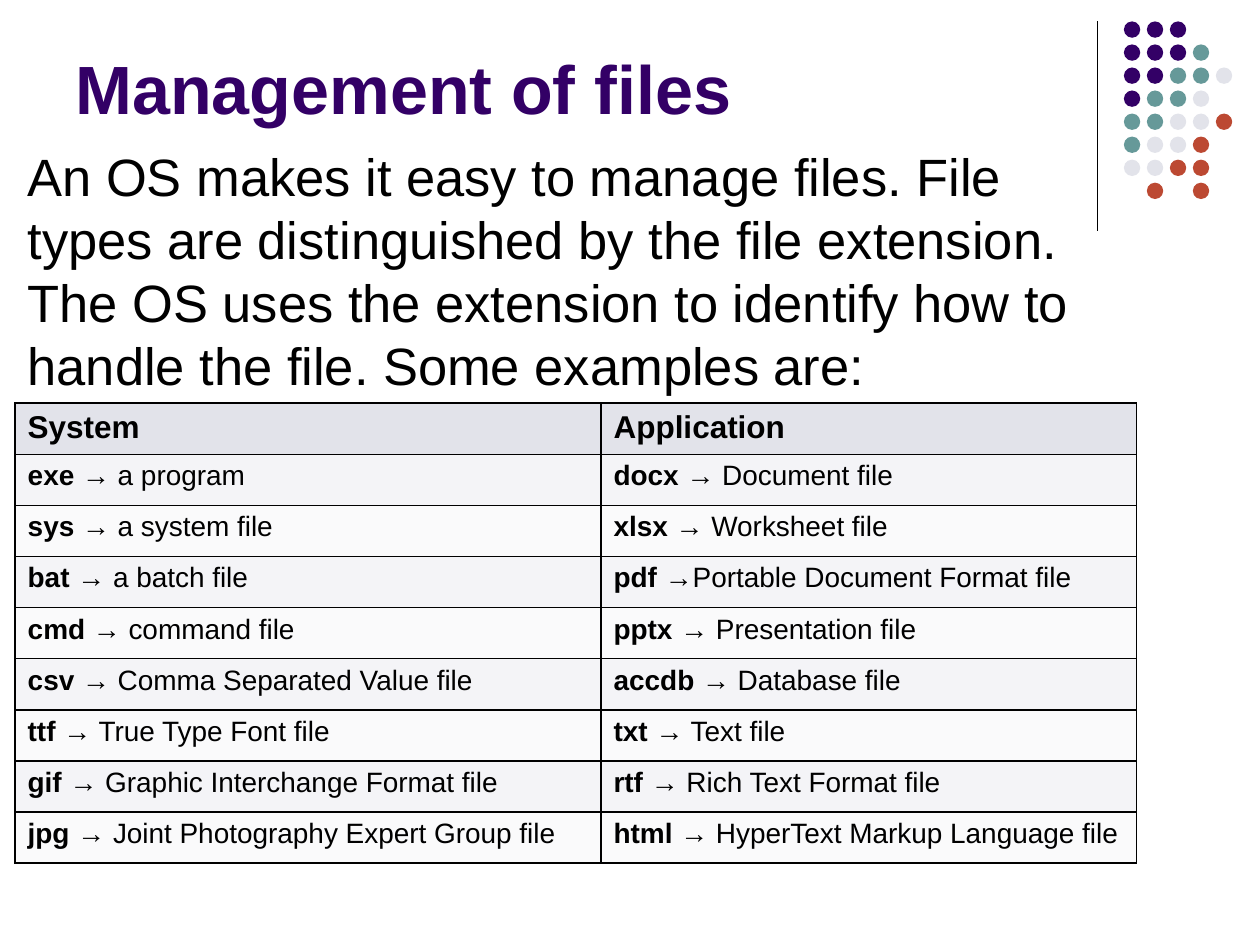
from dataclasses import dataclass

from lxml import etree
from pptx import Presentation
from pptx import util as u
from pptx.dml.color import RGBColor
from pptx.enum import shapes, text
from pptx.oxml import ns


@dataclass(frozen=True)
class Theme:
    font: str = "Arial"
    purple: str = "330066"
    teal: str = "669999"
    mist: str = "E2E3EA"
    rust: str = "BC4932"
    black: str = "000000"
    bands: tuple = ("F4F4F7", "FAFAFB")
    title_size: int = 39
    body_size: int = 30
    body_leading: int = 36
    head_size: int = 18
    cell_size: int = 16


THEME = Theme()

TITLE = "Management of files"
BODY = ("An OS makes it easy to manage files. File types are distinguished by "
        "the file extension. The OS uses the extension to identify how to "
        "handle the file. Some examples are:")

# One letter per dot: purple, teal, mist, rust; a dot in the text is a gap
DOTS = ("PPP..", "PPPT.", "PPTTM", "PTTM.", "TTMMR", "TMMR.", "MMRR.", ".R.R.")
DOT_COLORS = {"P": THEME.purple, "T": THEME.teal, "M": THEME.mist, "R": THEME.rust}

HEADINGS = ("System", "Application")
FILE_TYPES = (
    (("exe ", "→ a program"), ("docx ", "→ Document file")),
    (("sys ", "→ a system file"), ("xlsx ", "→ Worksheet file")),
    (("bat ", "→ a batch file"), ("pdf ", "→Portable Document Format file")),
    (("cmd ", "→ command file"), ("pptx ", "→ Presentation file")),
    (("csv ", "→ Comma Separated Value file"), ("accdb ", "→ Database file")),
    (("ttf ", "→ True Type Font file"), ("txt ", "→ Text file")),
    (("gif ", "→ Graphic Interchange Format file"), ("rtf ", "→ Rich Text Format file")),
    (("jpg ", "→ Joint Photography Expert Group file"),
     ("html ", "→ HyperText Markup Language file")),
)


def rgb(color):
    return RGBColor.from_string(color)


def add_span(para, words, size, color=THEME.black, bold=False):
    span = para.add_run()
    span.text = words
    span.font.name = THEME.font
    span.font.size = u.Pt(size)
    span.font.bold = bold
    span.font.color.rgb = rgb(color)


def add_text_frame(page, area, anchor):
    frame = page.shapes.add_textbox(*map(u.Inches, area)).text_frame
    frame.word_wrap = True
    frame.vertical_anchor = anchor
    return frame


def add_divider(page, x, top, bottom):
    line = page.shapes.add_connector(
        shapes.MSO_CONNECTOR.STRAIGHT,
        u.Inches(x), u.Inches(top), u.Inches(x), u.Inches(bottom))
    line.line.color.rgb = rgb(THEME.black)
    line.line.width = u.Pt(0.75)
    etree.SubElement(line._element.spPr, ns.qn("a:effectLst"))


def add_dots(page, area, size=0.13):
    left, top, width, height = area
    step_x = (width - size) / (len(DOTS[0]) - 1)
    step_y = (height - size) / (len(DOTS) - 1)
    group = page.shapes.add_group_shape()
    for row, pattern in enumerate(DOTS):
        for column, letter in enumerate(pattern):
            if letter == ".":
                continue
            dot = group.shapes.add_shape(
                shapes.MSO_SHAPE.OVAL,
                u.Inches(left + column * step_x), u.Inches(top + row * step_y),
                u.Inches(size), u.Inches(size))
            dot.shadow.inherit = False
            dot.fill.solid()
            dot.fill.fore_color.rgb = rgb(DOT_COLORS[letter])
            dot.line.fill.background()


def add_title(page, area):
    frame = add_text_frame(page, area, text.MSO_ANCHOR.BOTTOM)
    add_span(frame.paragraphs[0], TITLE, THEME.title_size, THEME.purple, True)


def add_body(page, area):
    frame = add_text_frame(page, area, text.MSO_ANCHOR.TOP)
    frame.margin_top = u.Inches(0.07)
    para = frame.paragraphs[0]
    para.line_spacing = u.Pt(THEME.body_leading)
    add_span(para, BODY, THEME.body_size)


def style_cell(cell, color):
    properties = cell._tc.get_or_add_tcPr()
    for side in ("lnL", "lnR", "lnT", "lnB"):
        border = etree.SubElement(properties, ns.qn(f"a:{side}"), w=str(u.Pt(1)))
        fill = etree.SubElement(border, ns.qn("a:solidFill"))
        etree.SubElement(fill, ns.qn("a:srgbClr"), val=THEME.black)
    cell.fill.solid()
    cell.fill.fore_color.rgb = rgb(color)


def add_file_table(page, area, column_widths):
    rows = len(FILE_TYPES) + 1
    table = page.shapes.add_table(
        rows, len(HEADINGS), *map(u.Inches, area)).table
    for column, width in zip(table.columns, column_widths):
        column.width = u.Inches(width)
    for row in table.rows:
        row.height = u.Inches(area[3] / rows)

    # Heading row
    for column, heading in enumerate(HEADINGS):
        cell = table.cell(0, column)
        style_cell(cell, THEME.mist)
        add_span(cell.text_frame.paragraphs[0], heading, THEME.head_size, bold=True)

    # Banded rows: bold extension, plain meaning
    for row, entries in enumerate(FILE_TYPES):
        for column, (extension, meaning) in enumerate(entries):
            cell = table.cell(row + 1, column)
            style_cell(cell, THEME.bands[row % 2])
            para = cell.text_frame.paragraphs[0]
            add_span(para, extension, THEME.cell_size, bold=True)
            add_span(para, meaning, THEME.cell_size)


def main():
    deck = Presentation()
    deck.slide_width, deck.slide_height = u.Inches(10), u.Inches(7.5)
    page = deck.slides.add_slide(deck.slide_layouts[6])

    # Corner decoration
    add_divider(page, 8.71, 0.17, 1.83)
    add_dots(page, (8.92, 0.17, 0.86, 1.41))

    # Content
    add_title(page, (0.5, 0.13, 8.25, 0.94))
    add_body(page, (0.12, 1.07, 9, 5.79))
    add_file_table(page, (0.12, 3.2, 8.9, 3.65), (4.65, 4.25))

    deck.save("out.pptx")


if __name__ == "__main__":
    main()
